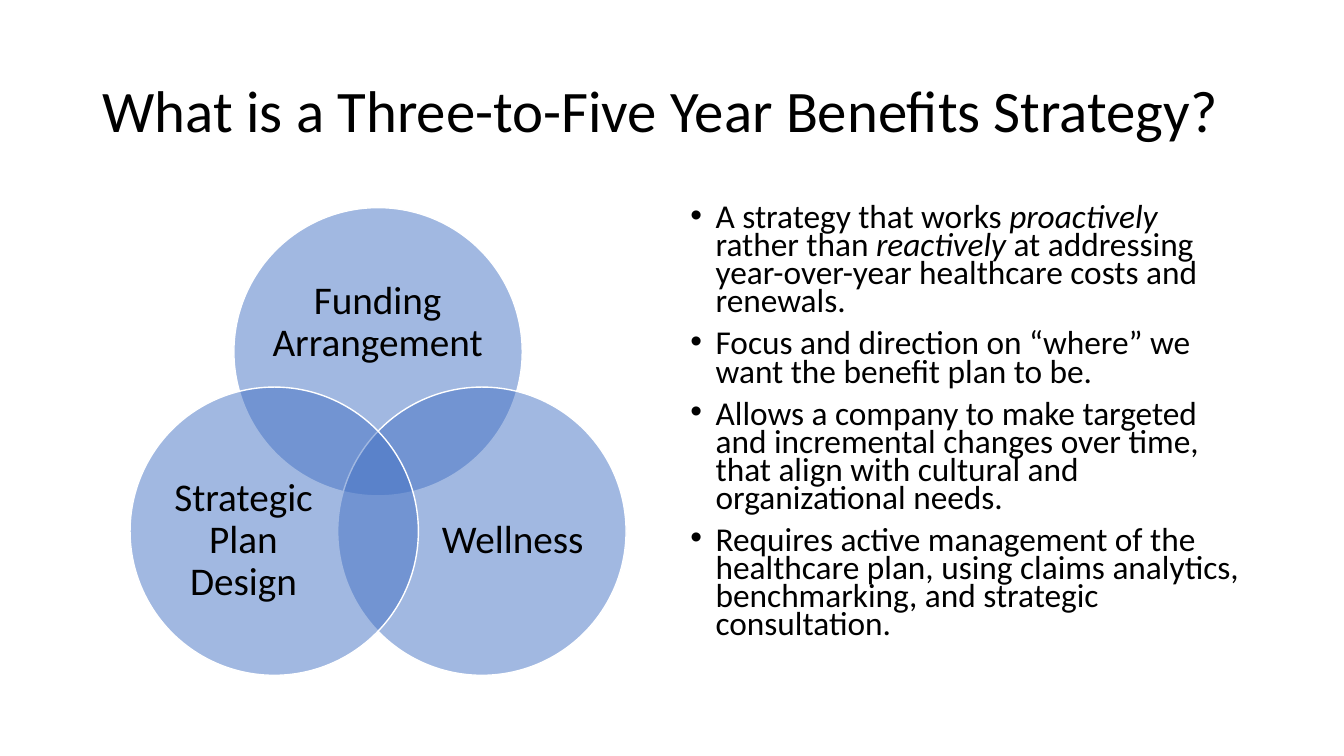
from lxml.etree import SubElement
from pptx import Presentation
from pptx.dml.color import RGBColor
from pptx.enum.shapes import MSO_SHAPE
from pptx.enum.text import MSO_ANCHOR, PP_ALIGN
from pptx.oxml.ns import qn
from pptx.util import Inches, Pt

BLACK = RGBColor(0x00, 0x00, 0x00)
WHITE = RGBColor(0xFF, 0xFF, 0xFF)
BLUE = RGBColor(0x44, 0x72, 0xC4)
FONT = "Calibri"

TITLE = "What is a Three-to-Five Year Benefits Strategy?"
DIAMETER = 2.86
UPPER_LABEL = (0.38, 0.5, 2.09, 1.28)
RIGHT_LABEL = (0.88, 0.74, 1.71, 1.57)
LEFT_LABEL = (0.27, 0.74, 1.71, 1.57)
THEMES = [
    ("Funding Arrangement", 1.03, 0, UPPER_LABEL),
    ("Wellness", 2.06, 1.78, RIGHT_LABEL),
    ("Strategic Plan Design", 0, 1.78, LEFT_LABEL),
]
POINTS = [
    [("A strategy that works ", False), ("proactively", True),
     (" rather than ", False), ("reactively ", True),
     ("at addressing year-over-year healthcare costs and renewals.", False)],
    [("Focus and direction on “where” we want the benefit plan to be.", False)],
    [("Allows a company to make targeted and incremental changes over time, "
      "that align with cultural and organizational needs.", False)],
    [("Requires active management of the healthcare plan, using claims "
      "analytics, benchmarking, and strategic consultation.", False)],
]


def add_frame(slide, left, top, width, height):
    frame = slide.shapes.add_textbox(
        Inches(left), Inches(top), Inches(width), Inches(height)).text_frame
    frame.word_wrap = True
    return frame


def style_run(run, size, italic=False):
    run.font.name = FONT
    run.font.size = Pt(size)
    run.font.italic = italic
    run.font.color.rgb = BLACK


def add_title(slide, left, top, width, height):
    frame = add_frame(slide, left, top, width, height)
    frame.vertical_anchor = MSO_ANCHOR.MIDDLE
    frame.text = TITLE
    heading = frame.paragraphs[0]
    heading.line_spacing = 0.9
    style_run(heading.runs[0], 42)


def add_circle(slide, left, top):
    circle = slide.shapes.add_shape(
        MSO_SHAPE.OVAL, Inches(left), Inches(top),
        Inches(DIAMETER), Inches(DIAMETER))
    circle.shadow.inherit = False
    circle.fill.solid()
    circle.fill.fore_color.rgb = BLUE
    color = circle.fill._xPr.find(qn("a:solidFill"))[0]
    SubElement(color, qn("a:alpha"), val="50000")
    circle.line.color.rgb = WHITE
    circle.line.width = Pt(1)


def add_label(slide, theme, left, top, width, height):
    frame = add_frame(slide, left, top, width, height)
    frame.margin_left = frame.margin_right = 0
    frame.margin_top = frame.margin_bottom = 0
    frame.vertical_anchor = MSO_ANCHOR.MIDDLE
    frame.text = theme
    label = frame.paragraphs[0]
    label.alignment = PP_ALIGN.CENTER
    label.line_spacing = 0.9
    style_run(label.runs[0], 28)


def add_venn(slide, left, top):
    for theme, across, down, (dx, dy, width, height) in THEMES:
        x, y = left + across, top + down
        add_circle(slide, x, y)
        add_label(slide, theme, x + dx, y + dy, width, height)


def add_bullet(paragraph):
    properties = paragraph._p.get_or_add_pPr()
    properties.set("marL", str(Inches(0.25)))
    properties.set("indent", str(Inches(-0.25)))
    SubElement(properties, qn("a:buFont"), typeface="Arial")
    SubElement(properties, qn("a:buChar"), char="•")


def add_points(slide, left, top, width, height):
    frame = add_frame(slide, left, top, width, height)
    for index, pieces in enumerate(POINTS):
        point = frame.add_paragraph() if index else frame.paragraphs[0]
        point.line_spacing = 0.7
        point.space_before = Pt(10)
        add_bullet(point)
        for wording, italic in pieces:
            run = point.add_run()
            run.text = wording
            style_run(run, 23.8, italic)


def main():
    deck = Presentation()
    deck.slide_width = Inches(13.33)
    deck.slide_height = Inches(7.5)
    slide = deck.slides.add_slide(deck.slide_layouts[6])
    add_title(slide, 0.92, 0.4, 11.5, 1.45)
    add_venn(slide, 1.29, 2.06)
    add_points(slide, 6.75, 2, 5.67, 4.76)
    deck.save("out.pptx")


if __name__ == "__main__":
    main()
